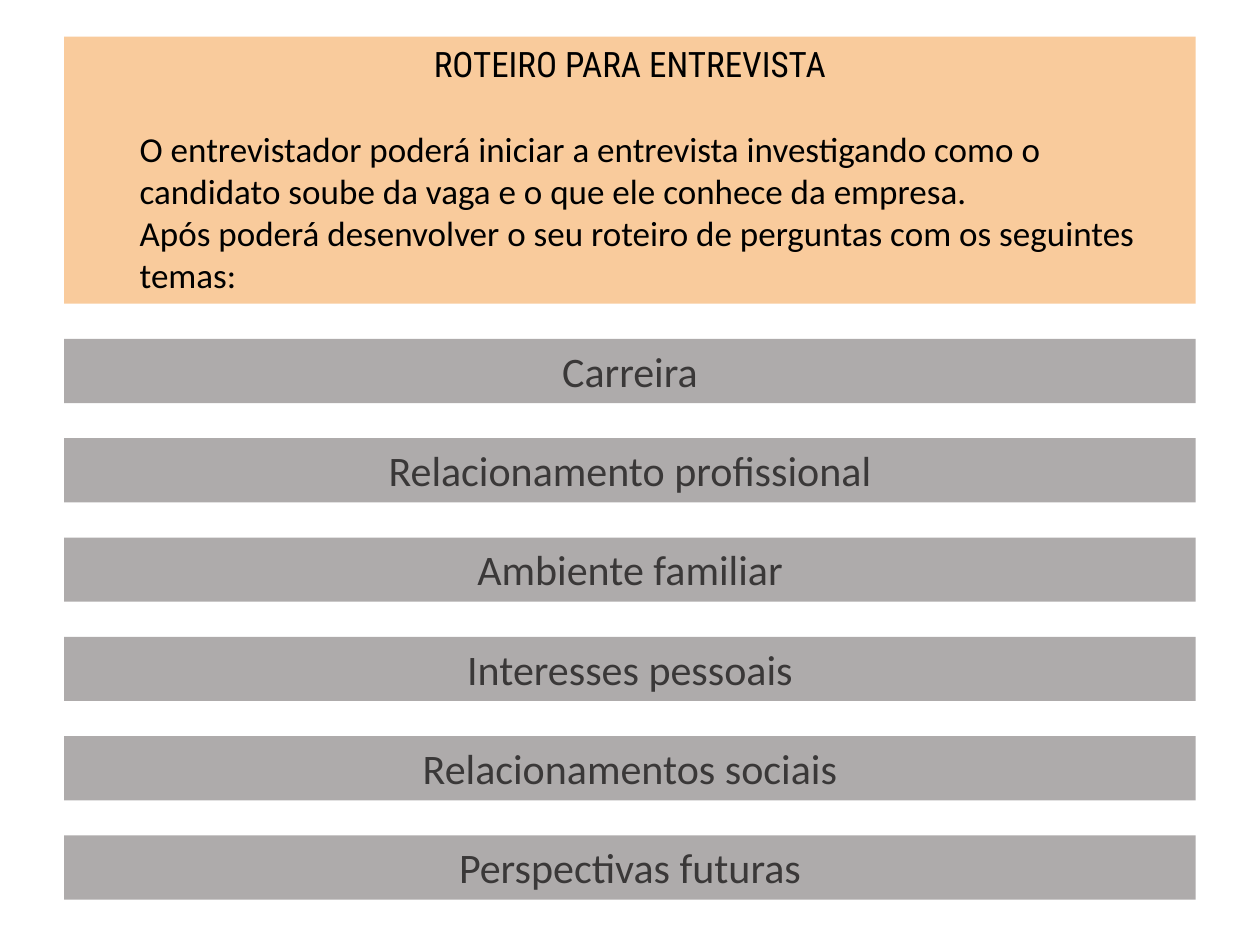
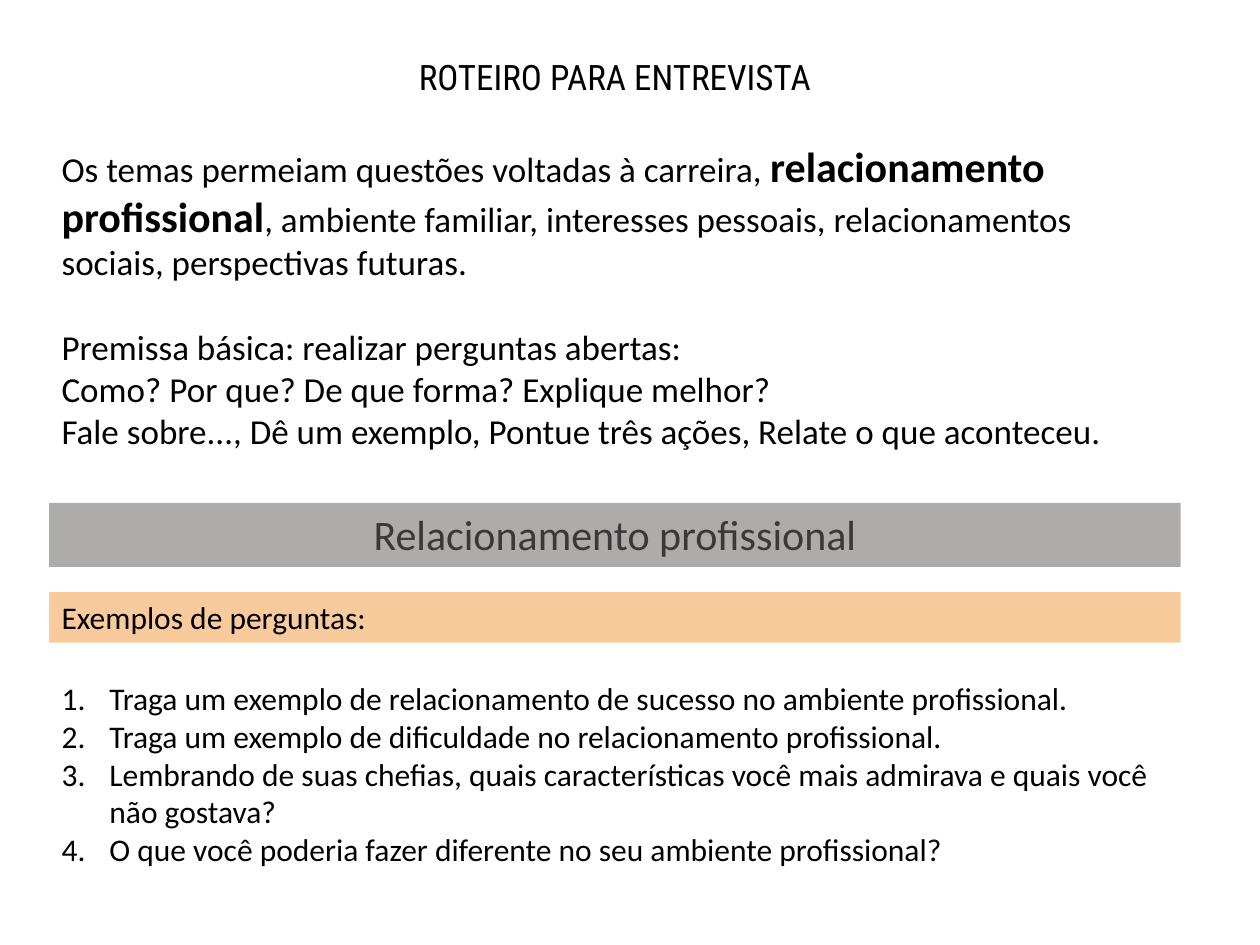
import dataclasses

import pptx
import pptx.dml.color
import pptx.enum.shapes
import pptx.enum.text
import pptx.util
from lxml import etree
from pptx.oxml.ns import qn

Inches = pptx.util.Inches
Pt = pptx.util.Pt
ALIGN = pptx.enum.text.PP_ALIGN

BLACK, CHARCOAL, GRAY, PEACH = "000000", "3A3838", "AEABAB", "F9CB9C"
BODY_FONT, TITLE_FONT = "Calibri", "Roboto Condensed"
WIDTH = 8.98
BAR_HEIGHT = 0.51
BLANK_LINE = 24.4


def rgb(value):
    return pptx.dml.color.RGBColor.from_string(value)


@dataclasses.dataclass
class Line:
    text: str
    size: float = 20
    font: str = BODY_FONT
    color: str = BLACK
    centered: bool = False
    before: float = 0
    indent: float = 0
    numbered: bool = False
    emphasis: str = ""


TITLE = Line("ROTEIRO PARA ENTREVISTA", font=TITLE_FONT, centered=True)


class Deck:
    """Holds the shared style and the slide being built."""

    def __init__(self):
        self.presentation = pptx.Presentation()
        self.presentation.slide_width = Inches(10)
        self.presentation.slide_height = Inches(7.5)
        self.slide = None
        self.left = 0

    def new_slide(self, left):
        self.slide = self.presentation.slides.add_slide(self.presentation.slide_layouts[6])
        self.left = left

    def band(self, top, height, fill, lines):
        band = self.slide.shapes.add_shape(
            pptx.enum.shapes.MSO_SHAPE.RECTANGLE,
            Inches(self.left), Inches(top), Inches(WIDTH), Inches(height))
        band.shadow.inherit = False
        band.fill.solid()
        band.fill.fore_color.rgb = rgb(fill)
        band.line.fill.background()
        self.fill_text(band.text_frame, lines)

    def topic(self, top, name):
        self.band(top, BAR_HEIGHT, GRAY, [Line(name, size=24, color=CHARCOAL, centered=True)])

    def text(self, top, height, lines):
        box = self.slide.shapes.add_textbox(
            Inches(self.left), Inches(top), Inches(WIDTH), Inches(height))
        self.fill_text(box.text_frame, lines)

    def fill_text(self, frame, lines):
        frame.word_wrap = True
        frame.vertical_anchor = pptx.enum.text.MSO_ANCHOR.TOP
        frame.text = "\n".join(line.text for line in lines)
        for paragraph, line in zip(frame.paragraphs, lines):
            self.format_line(paragraph, line)

    def format_line(self, paragraph, line):
        paragraph.alignment = ALIGN.CENTER if line.centered else ALIGN.LEFT
        paragraph.space_before = Pt(line.before)
        if line.emphasis:
            start, end = line.text.split(line.emphasis)
            paragraph.text = start
            for part in (line.emphasis, end):
                paragraph.add_run().text = part
        for run in paragraph.runs:
            strong = run.text == line.emphasis
            run.font.name = line.font
            run.font.size = Pt(24 if strong else line.size)
            run.font.bold = strong
            run.font.color.rgb = rgb(line.color)
        properties = paragraph._p.get_or_add_pPr()
        if line.indent:
            properties.set("marL", str(Inches(line.indent)))
        if line.numbered:
            properties.set("indent", str(-Inches(line.indent)))
            etree.SubElement(properties, qn("a:buAutoNum"), type="arabicPeriod")


def build_topics(deck):
    deck.new_slide(0.51)
    deck.band(0.29, 2.12, PEACH, [
        TITLE,
        Line("O entrevistador poderá iniciar a entrevista investigando como o candidato "
             "soube da vaga e o que ele conhece da empresa.", before=BLANK_LINE, indent=0.5),
        Line("Após poderá desenvolver o seu roteiro de perguntas com os seguintes temas:",
             indent=0.5),
    ])
    topics = ["Carreira", "Relacionamento profissional", "Ambiente familiar",
              "Interesses pessoais", "Relacionamentos sociais", "Perspectivas futuras"]
    first, last = 2.69, 6.63
    pitch = (last - first) / (len(topics) - 1)
    for row, topic in enumerate(topics):
        deck.topic(first + row * pitch, topic)


def build_questions(deck):
    deck.new_slide(0.39)
    deck.text(0.39, 3.6, [
        TITLE,
        Line("Os temas permeiam questões voltadas à carreira, relacionamento profissional, "
             "ambiente familiar, interesses pessoais, relacionamentos sociais, "
             "perspectivas futuras.",
             before=BLANK_LINE, emphasis="relacionamento profissional"),
        Line("Premissa básica: realizar perguntas abertas:", before=BLANK_LINE),
        Line("Como? Por que? De que forma? Explique melhor?"),
        Line("Fale sobre..., Dê um exemplo, Pontue três ações, Relate o que aconteceu."),
    ])
    deck.topic(3.99, "Relacionamento profissional")
    deck.band(4.7, 0.4, PEACH, [Line("Exemplos de perguntas:", size=18)])
    questions = [
        "Traga um exemplo de relacionamento de sucesso no ambiente profissional.",
        "Traga um exemplo de dificuldade no relacionamento profissional.",
        "Lembrando de suas chefias, quais características você mais admirava e quais você "
        "não gostava?",
        "O que você poderia fazer diferente no seu ambiente profissional?",
    ]
    deck.text(5.34, 1.62, [Line(question, size=18, indent=0.38, numbered=True)
                           for question in questions])


def main():
    deck = Deck()
    build_topics(deck)
    build_questions(deck)
    deck.presentation.save("out.pptx")


if __name__ == "__main__":
    main()
